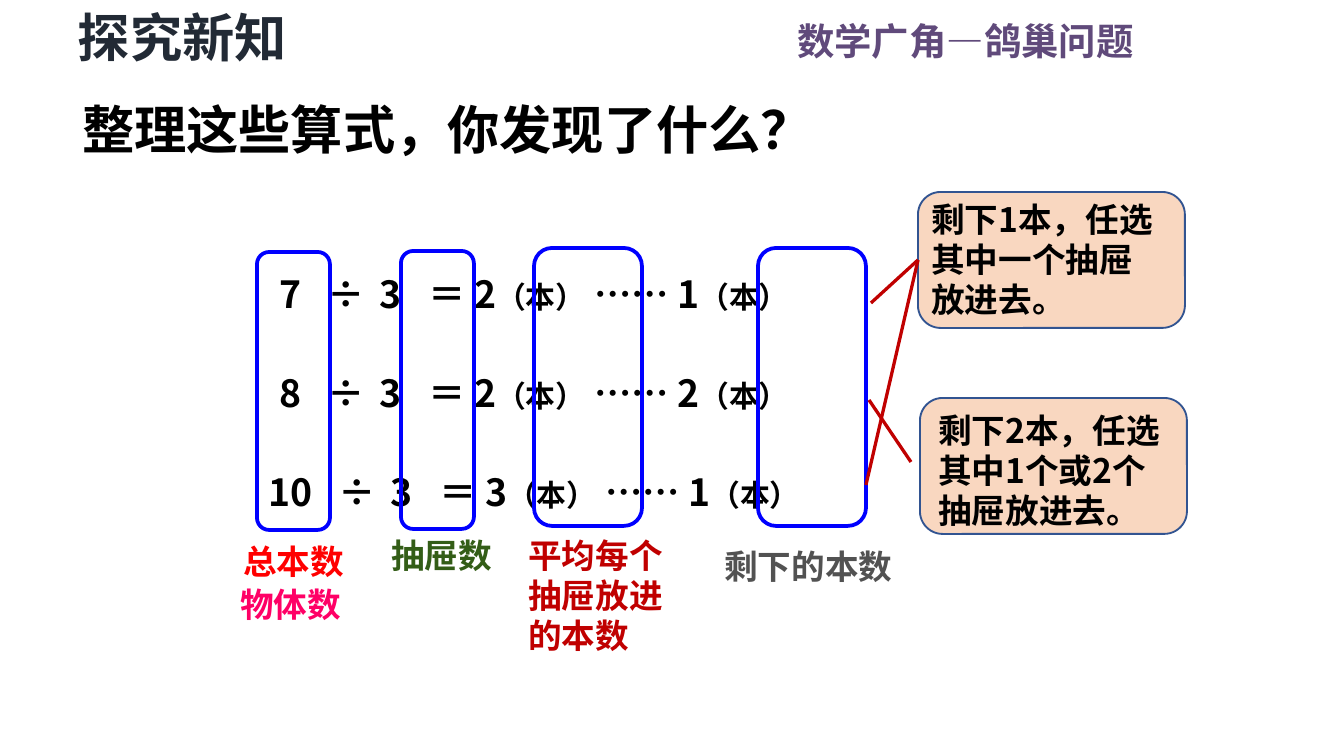
import pptx
import pptx.util
import pptx.dml.color
import pptx.enum.shapes
import pptx.enum.text
import pptx.oxml
import pptx.oxml.ns
from lxml import etree

PX = 914400 / 134.4
FONT = "Noto Sans CJK SC"
COLORS = {
    "black": "000000", "navy": "222A35", "purple": "604A7B",
    "red": "FF0000", "pink": "FF0066", "green": "335D17",
    "crimson": "C00000", "gray": "525252", "blue": "0000FF",
    "orange": "ED7D31", "edge": "325491",
}
DIGIT = 22
TABS = (48, 100, 149)
SHAPE = pptx.enum.shapes.MSO_SHAPE.ROUNDED_RECTANGLE
ALIGN = pptx.enum.text.PP_ALIGN


def px(n):
    return pptx.util.Emu(round(n * PX))


def rgb(name):
    return pptx.dml.color.RGBColor.from_string(COLORS[name])


def sub(parent, tag, **attrs):
    return etree.SubElement(parent, pptx.oxml.ns.qn(tag), attrs)


def style(para, size, color):
    font = para.font
    font.name = FONT
    font.size = pptx.util.Pt(size)
    font.bold = True
    font.color.rgb = rgb(color)
    sub(font._element, "a:ea", typeface=FONT)


def frame(slide, box):
    area = slide.shapes.add_textbox(*map(px, box)).text_frame
    area.word_wrap = True
    return area


def label(slide, box, text, size, color, align=ALIGN.LEFT):
    area = frame(slide, box)
    para = area.paragraphs[0]
    para.text = text
    para.alignment = align
    style(para, size, color)
    return area


def sum_row(slide, left, top, total, share, rest):
    """One division with remainder; tab stops hold its terms in columns."""
    para = frame(slide, (left, top, 680, 59)).paragraphs[0]
    shift = DIGIT * (len(total) - 1)
    stops = sub(para._p.get_or_add_pPr(), "a:tabLst")
    for stop in TABS:
        sub(stops, "a:tab", pos=str(px(stop + shift)), algn="l")
    style(para, 20, "black")
    unit = "（本）"
    for text in (f"{total}\t÷\t3\t＝ {share}", unit, f" …… {rest}", unit):
        run = para.add_run()
        run.text = text
        run.font.size = pptx.util.Pt(16 if text == unit else 20)


def round_box(slide, box, color, width):
    shape = slide.shapes.add_shape(SHAPE, *map(px, box))
    shape.shadow.inherit = False
    shape.fill.background()
    shape.line.color.rgb = rgb(color)
    shape.line.width = pptx.util.Pt(width)
    return shape


def callout(slide, box, spot, text):
    shape = round_box(slide, box, "edge", 1)
    shape.fill.solid()
    shape.fill.fore_color.rgb = rgb("orange")
    tint = shape._element.spPr.find(".//" + pptx.oxml.ns.qn("a:srgbClr"))
    sub(tint, "a:alpha", val="30000")
    label(slide, (*spot, 257, 136), text, 18, "black")


def link(slide, *ends):
    kind = pptx.enum.shapes.MSO_CONNECTOR.STRAIGHT
    line = slide.shapes.add_connector(kind, *map(px, ends))
    line.line.color.rgb = rgb("crimson")
    line.line.width = pptx.util.Pt(1.75)
    sub(line._element.spPr, "a:effectLst")


def main():
    deck = pptx.Presentation()
    deck.slide_width, deck.slide_height = px(1344), px(756)
    slide = deck.slides.add_slide(deck.slide_layouts[6])

    label(slide, (767, 12, 380, 59), "数学广角—鸽巢问题", 20, "purple", ALIGN.RIGHT)
    head = label(slide, (69, 0, 271, 74), "探究新知", 28, "navy")
    head.margin_left = head.margin_right = px(9)
    head.margin_top = head.margin_bottom = px(5)
    ask = label(slide, (69, 90, 1128, 77), "整理这些算式，你发现了什么？", 28, "black")
    ask.vertical_anchor = pptx.enum.text.MSO_ANCHOR.MIDDLE

    sums = (("7", 2, 1), ("8", 2, 2), ("10", 3, 1))
    for i, (total, share, rest) in enumerate(sums):
        left = 266 - DIGIT // 2 * (len(total) - 1)
        sum_row(slide, left, 265 + 99 * i, total, share, rest)

    for left, top, width in ((257, 252, 73), (401, 251, 73),
                             (534, 248, 108), (758, 248, 108)):
        round_box(slide, (left, top, width, 278), "blue", 2)

    for left, top, width, height, text, color in (
            (230, 534, 206, 54, "总本数", "red"),
            (227, 577, 206, 54, "物体数", "pink"),
            (378, 528, 206, 54, "抽屉数", "green"),
            (515, 528, 175, 136, "平均每个抽屉放进的本数", "crimson"),
            (711, 539, 206, 54, "剩下的本数", "gray")):
        label(slide, (left, top, width, height), text, 18, color)

    callout(slide, (918, 192, 267, 136), (918, 192),
            "剩下1本，任选其中一个抽屉放进去。")
    callout(slide, (920, 398, 267, 136), (925, 403),
            "剩下2本，任选其中1个或2个抽屉放进去。")

    link(slide, 871, 303, 918, 260)
    link(slide, 866, 485, 918, 260)
    link(slide, 869, 400, 911, 462)
    deck.save("out.pptx")


if __name__ == "__main__":
    main()
